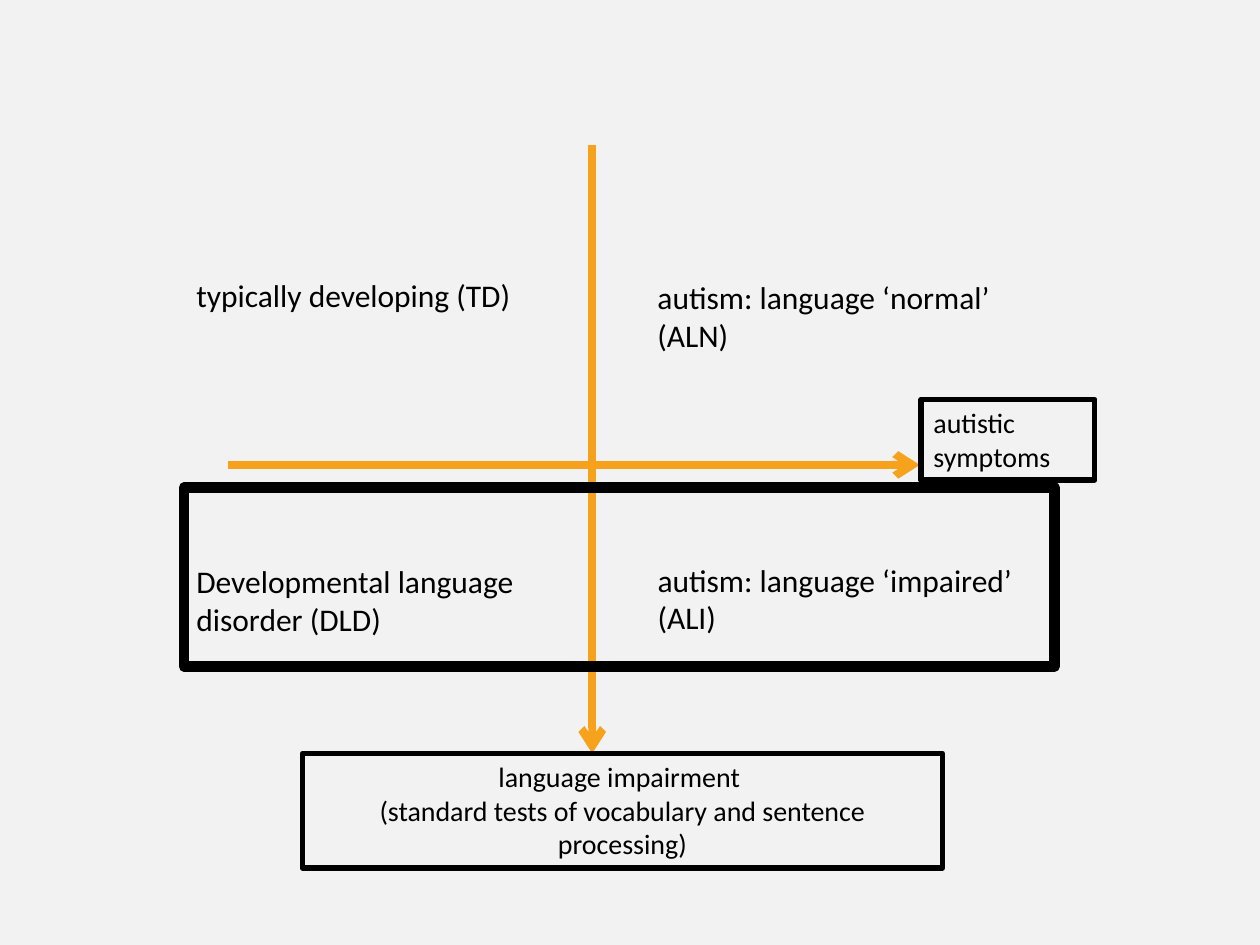
import pptx
import pptx.util
import pptx.dml.color
import pptx.enum.shapes
import pptx.enum.text
import pptx.oxml
import pptx.oxml.ns

Inches = pptx.util.Inches
BLACK, ORANGE, PAPER = "000000", "F6A21D", "F2F2F2"
FRAME = {"word_wrap": True,
         "vertical_anchor": pptx.enum.text.MSO_ANCHOR.TOP,
         "auto_size": pptx.enum.text.MSO_AUTO_SIZE.SHAPE_TO_FIT_TEXT}
LEFT = pptx.enum.text.PP_ALIGN.LEFT
CENTER = pptx.enum.text.PP_ALIGN.CENTER


def color(code):
    return pptx.dml.color.RGBColor.from_string(code)


def apply(item, values):
    for name, value in values.items():
        setattr(item, name, value)


def write(shape, lines, size, align=LEFT):
    frame = shape.text_frame
    apply(frame, FRAME)
    frame.text = "\n".join(lines)
    for para in frame.paragraphs:
        para.alignment = align
        apply(para.runs[0].font, {"name": "Calibri", "size": pptx.util.Pt(size)})
        para.runs[0].font.color.rgb = color(BLACK)


def label(slide, place, text):
    write(slide.shapes.add_textbox(*map(Inches, place)), [text], 18)


def box(slide, place, width):
    kind = pptx.enum.shapes.MSO_SHAPE.RECTANGLE
    shape = slide.shapes.add_shape(kind, *map(Inches, place))
    shape.shadow.inherit = False
    shape.fill.background()
    shape.line.color.rgb = color(BLACK)
    shape.line.width = pptx.util.Pt(width)
    return shape


def arrow(slide, *ends):
    kind = pptx.enum.shapes.MSO_CONNECTOR.STRAIGHT
    axis = slide.shapes.add_connector(kind, *map(Inches, ends))
    axis.line.color.rgb = color(ORANGE)
    axis.line.width = pptx.util.Pt(4.5)
    # Open arrowhead, no shadow
    line = axis.line._get_or_add_ln()
    tail = pptx.oxml.parse_xml(
        "<a:tailEnd %s type='arrow'/>" % pptx.oxml.ns.nsdecls("a"))
    line.append(tail)
    line.addnext(pptx.oxml.parse_xml(
        "<a:effectLst %s/>" % pptx.oxml.ns.nsdecls("a")))


def main():
    deck = pptx.Presentation()
    apply(deck, {"slide_width": Inches(10), "slide_height": Inches(7.5)})
    slide = deck.slides.add_slide(deck.slide_layouts[6])
    slide.background.fill.solid()
    slide.background.fill.fore_color.rgb = color(PAPER)

    # Axes with their names
    arrow(slide, 1.81, 3.69, 7.3, 3.69)
    write(box(slide, (7.31, 3.17, 1.38, 0.64), 3), ["autistic symptoms"], 16)
    arrow(slide, 4.7, 1.15, 4.7, 5.98)
    write(box(slide, (2.4, 5.98, 5.08, 0.91), 3),
          ["language impairment ",
           "(standard tests of vocabulary and sentence processing)"],
          16, CENTER)

    # Four groups
    for place, text in (
            ((5.12, 2.16, 2.86, 0.71), "autism: language ‘normal’ (ALN)"),
            ((5.12, 4.4, 3.25, 0.71), "autism: language ‘impaired’ (ALI)"),
            ((1.46, 2.14, 2.78, 0.4), "typically developing (TD)"),
            ((1.46, 4.41, 3.25, 0.71), "Developmental language disorder (DLD)")):
        label(slide, place, text)

    # Frame around the language-impaired groups
    box(slide, (1.46, 3.87, 6.91, 1.42), 6)
    deck.save("out.pptx")


if __name__ == "__main__":
    main()
